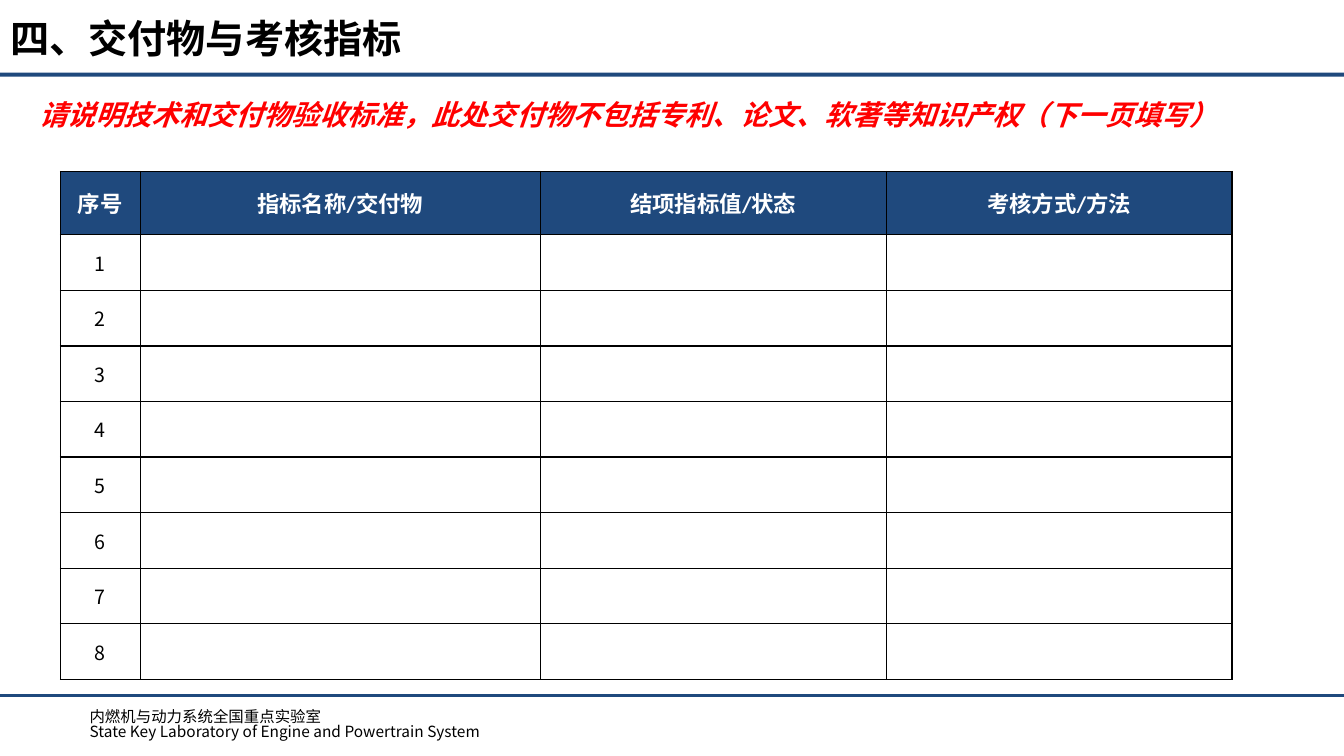
import pptx
import pptx.util
import pptx.dml.color
import pptx.enum.shapes
import pptx.enum.text
import pptx.oxml
from lxml import etree
from pptx.oxml import ns
from pptx.util import Inches

NAVY = pptx.dml.color.RGBColor(0x1F, 0x49, 0x7D)
RED = pptx.dml.color.RGBColor(0xFF, 0x00, 0x00)
BLACK = pptx.dml.color.RGBColor(0x00, 0x00, 0x00)
WHITE = pptx.dml.color.RGBColor(0xFF, 0xFF, 0xFF)

SANS = "Noto Sans CJK SC"
SANS_NOTE = "Noto Sans CJK JP"
HEADER_FONT = "Calibri"

HEADERS = ["序号", "指标名称/交付物", "结项指标值/状态", "考核方式/方法"]
COLUMN_WIDTHS = [0.79, 3.97, 3.43, 3.43]
ITEM_COUNT = 8
TABLE_HEIGHT = 5.04
HEADER_HEIGHT = 0.63


class SlideBuilder:
    def __init__(self, slide):
        self.slide = slide

    def run(self, paragraph, text, size, color=BLACK, font=SANS,
            east_asian=SANS, bold=False, italic=False):
        run = paragraph.add_run()
        run.text = text
        run.font.size = pptx.util.Pt(size)
        run.font.name = font
        run.font.bold = bold
        run.font.italic = italic
        run.font.color.rgb = color
        latin = run.font._element.find(ns.qn("a:latin"))
        typeface = etree.Element(ns.qn("a:ea"), typeface=east_asian)
        latin.addnext(typeface)

    def title(self, text, left, top, width, height):
        title = self.slide.shapes.title
        title.left, title.top = Inches(left), Inches(top)
        title.width, title.height = Inches(width), Inches(height)
        frame = title.text_frame
        frame.vertical_anchor = pptx.enum.text.MSO_ANCHOR.MIDDLE
        paragraph = frame.paragraphs[0]
        paragraph.alignment = pptx.enum.text.PP_ALIGN.LEFT
        self.run(paragraph, text, 28, bold=True)

    def text(self, lines, left, top, width, height, spacing=1.0, **style):
        box = self.slide.shapes.add_textbox(
            Inches(left), Inches(top), Inches(width), Inches(height))
        frame = box.text_frame
        frame.word_wrap = True
        for index, line in enumerate(lines):
            paragraph = frame.add_paragraph() if index else frame.paragraphs[0]
            paragraph.line_spacing = spacing
            self.run(paragraph, line, **style)

    def bar(self, left, top, width, height):
        shape = self.slide.shapes.add_shape(
            pptx.enum.shapes.MSO_SHAPE.RECTANGLE,
            Inches(left), Inches(top), Inches(width), Inches(height))
        shape.shadow.inherit = False
        shape.fill.solid()
        shape.fill.fore_color.rgb = NAVY
        shape.line.fill.background()

    def line(self, left, right, top):
        connector = self.slide.shapes.add_connector(
            pptx.enum.shapes.MSO_CONNECTOR.STRAIGHT,
            Inches(left), Inches(top), Inches(right), Inches(top))
        connector.line.color.rgb = NAVY
        connector.line.width = pptx.util.Pt(2)
        etree.SubElement(connector._element.spPr, ns.qn("a:effectLst"))

    def borders(self, cell):
        properties = cell._tc.get_or_add_tcPr()
        for index, side in enumerate(("lnL", "lnR", "lnT", "lnB")):
            border = pptx.oxml.parse_xml(
                f'<a:{side} {ns.nsdecls("a")} w="12700"><a:solidFill>'
                f'<a:srgbClr val="{BLACK}"/></a:solidFill></a:{side}>')
            properties.insert(index, border)

    def table(self, rows, left, top):
        table = self.slide.shapes.add_table(
            len(rows), len(COLUMN_WIDTHS), Inches(left), Inches(top),
            Inches(sum(COLUMN_WIDTHS)), Inches(TABLE_HEIGHT)).table
        for column, width in zip(table.columns, COLUMN_WIDTHS):
            column.width = Inches(width)
        body_height = (TABLE_HEIGHT - HEADER_HEIGHT) / ITEM_COUNT
        for row_index, values in enumerate(rows):
            header = row_index == 0
            table.rows[row_index].height = Inches(
                HEADER_HEIGHT if header else body_height)
            for column_index, value in enumerate(values):
                cell = table.cell(row_index, column_index)
                cell.vertical_anchor = pptx.enum.text.MSO_ANCHOR.MIDDLE
                if header:
                    cell.fill.solid()
                    cell.fill.fore_color.rgb = NAVY
                else:
                    cell.fill.background()
                self.borders(cell)
                paragraph = cell.text_frame.paragraphs[0]
                paragraph.alignment = pptx.enum.text.PP_ALIGN.CENTER
                if header:
                    self.run(paragraph, value, 16, WHITE, HEADER_FONT, bold=True)
                elif value:
                    self.run(paragraph, value, 14)


def main():
    presentation = pptx.Presentation()
    presentation.slide_width = Inches(13.33)
    presentation.slide_height = Inches(7.5)
    slide = presentation.slides.add_slide(presentation.slide_layouts[5])
    builder = SlideBuilder(slide)

    # Footer
    builder.line(0, 13.33, 6.9)
    builder.text(["内燃机与动力系统全国重点实验室",
                  "State Key Laboratory of Engine and Powertrain System"],
                 0.79, 6.99, 7.56, 0.47, spacing=0.85, size=11)

    # Title and rule
    builder.bar(0, 0.72, 13.33, 0.04)
    builder.title("四、交付物与考核指标", 0, 0, 7.84, 0.75)

    # Deliverables table
    items = [[str(number), "", "", ""] for number in range(1, ITEM_COUNT + 1)]
    builder.table([HEADERS] + items, 0.6, 1.7)

    # Filling instruction
    builder.text(
        ["请说明技术和交付物验收标准，此处交付物不包括专利、论文、软著等知识产权（下一页填写）"],
        0.29, 0.92, 12.36, 0.77, size=20, color=RED, font=SANS_NOTE,
        east_asian=SANS_NOTE, bold=True, italic=True)

    presentation.save("out.pptx")


if __name__ == "__main__":
    main()
